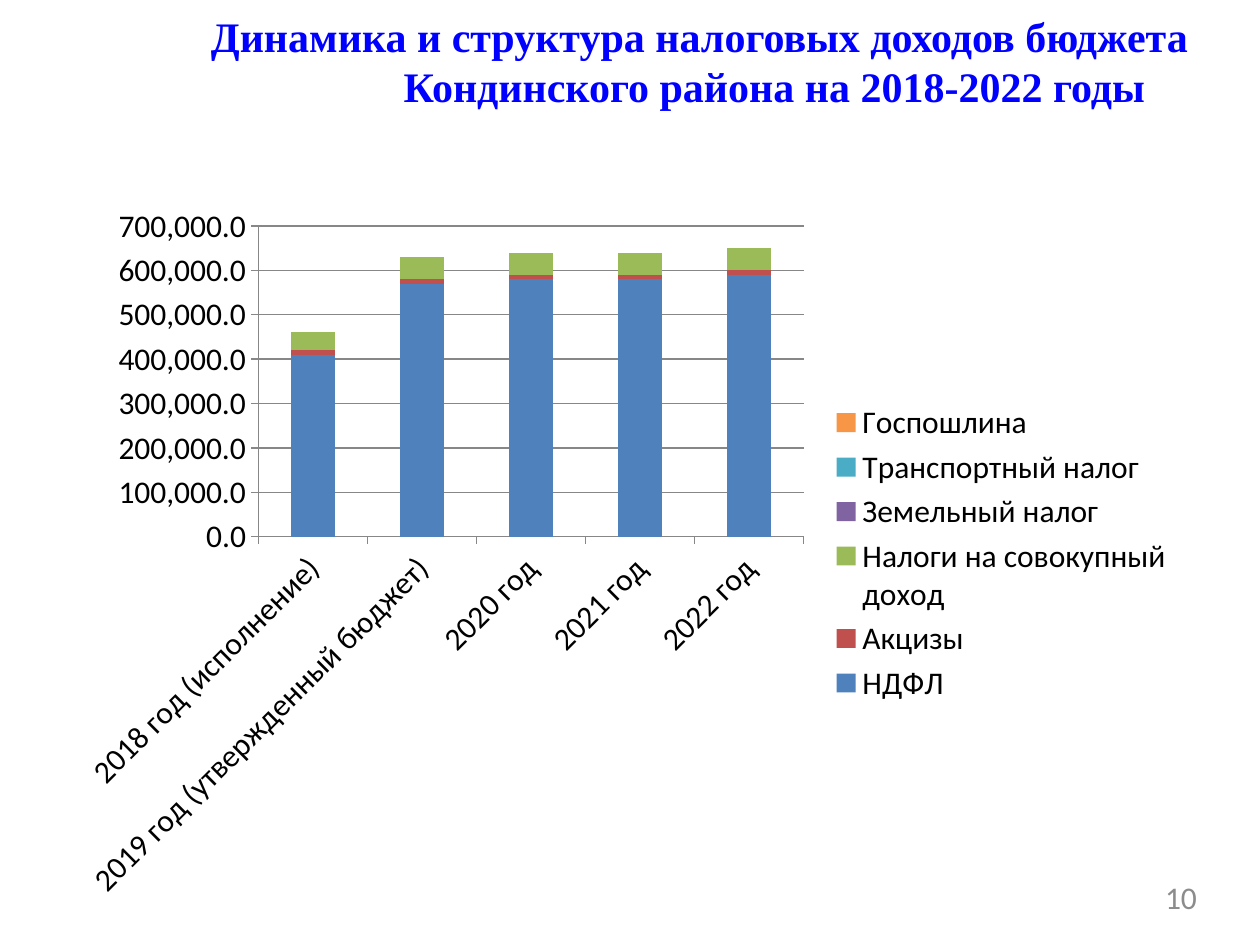
from pptx import Presentation
from pptx.chart.data import CategoryChartData as Data
from pptx.dml.color import RGBColor as RGB
from pptx.enum.chart import XL_CHART_TYPE as Kind, XL_LEGEND_POSITION as Side
from pptx.enum.chart import XL_TICK_MARK as Tick
from pptx.enum.text import MSO_ANCHOR as Anchor, MSO_AUTO_SIZE as Fit, PP_ALIGN as Align
from pptx.util import Cm, Pt

HUE = {
    "title": "0000FF", "text": "000000", "page": "8C8C8C", "grid": "878787",
    "НДФЛ": "4F81BD", "Акцизы": "C0504D", "Налоги на совокупный доход": "9BBB59",
    "Земельный налог": "8064A2", "Транспортный налог": "4BACC6", "Госпошлина": "F79646",
}
YEARS = ["2018 год (исполнение)", "2019 год (утвержденный бюджет)",
         "2020 год", "2021 год", "2022 год"]
# One value per year
TAXES = {
    "НДФЛ": [410000, 570000, 580000, 580000, 590000],
    "Акцизы": [10000] * 5,
    "Налоги на совокупный доход": [40000] + [50000] * 4,
    "Земельный налог": [0] * 5,
    "Транспортный налог": [0] * 5,
    "Госпошлина": [0] * 5,
}


def style(font, face, size, hue, bold=False):
    font.name, font.size, font.bold = face, Pt(size), bold
    font.color.rgb = RGB.from_string(HUE[hue])


def write(shape, text, align, *look):
    frame = shape.text_frame
    frame.margin_left = frame.margin_right = frame.margin_top = frame.margin_bottom = 0
    frame.word_wrap = True
    frame.auto_size = Fit.SHAPE_TO_FIT_TEXT
    frame.vertical_anchor = Anchor.TOP
    para = frame.paragraphs[0]
    para.alignment = align
    run = para.add_run()
    run.text = text
    style(run.font, *look)
    return para


deck = Presentation()
deck.slide_width, deck.slide_height = Cm(25.4), Cm(19.05)
slide = deck.slides.add_slide(deck.slide_layouts[5])

# Title with a hanging indent
title = slide.shapes.title
title.left, title.top, title.width, title.height = Cm(2.96), Cm(0.21), Cm(22.28), Cm(2.06)
para = write(title, "Динамика и структура налоговых доходов бюджета "
             "Кондинского района на 2018-2022 годы",
             Align.CENTER, "Times New Roman", 24, "title", True)
props = para._p.get_or_add_pPr()
props.set("marL", str(Cm(3.02)))
props.set("indent", str(Cm(-6.98)))

# Page number
page = slide.shapes.add_textbox(Cm(18.29), Cm(17.71), Cm(5.84), Cm(0.97))
write(page, "10", Align.RIGHT, "Calibri", 18, "page")

# Stacked columns
data = Data(number_format="#,##0.0")
data.categories = YEARS
for name, vals in TAXES.items():
    data.add_series(name, vals)
chart = slide.shapes.add_chart(Kind.COLUMN_STACKED, Cm(1.26), Cm(3.88),
                               Cm(22.66), Cm(14.53), data).chart
chart.has_title = False
style(chart.font, "Calibri", 18, "text")
plot = chart.plots[0]
plot.vary_by_categories = False
plot.gap_width, plot.overlap = 150, 100
for row in plot.series:
    row.format.fill.solid()
    row.format.fill.fore_color.rgb = RGB.from_string(HUE[row.name])

# Axes and legend
grid = RGB.from_string(HUE["grid"])
years, sums = chart.category_axis, chart.value_axis
sums.minimum_scale, sums.maximum_scale, sums.major_unit = 0, 700000, 100000
sums.has_major_gridlines = True
sums.tick_labels.number_format = "#,##0.0"
sums.tick_labels.number_format_is_linked = False
for axis in (years, sums):
    axis.major_tick_mark = Tick.OUTSIDE
for part in (years, sums, sums.major_gridlines):
    part.format.line.color.rgb = grid
    part.format.line.width = Pt(0.75)
chart.has_legend = True
chart.legend.position = Side.RIGHT
chart.legend.include_in_layout = False

deck.save("out.pptx")
